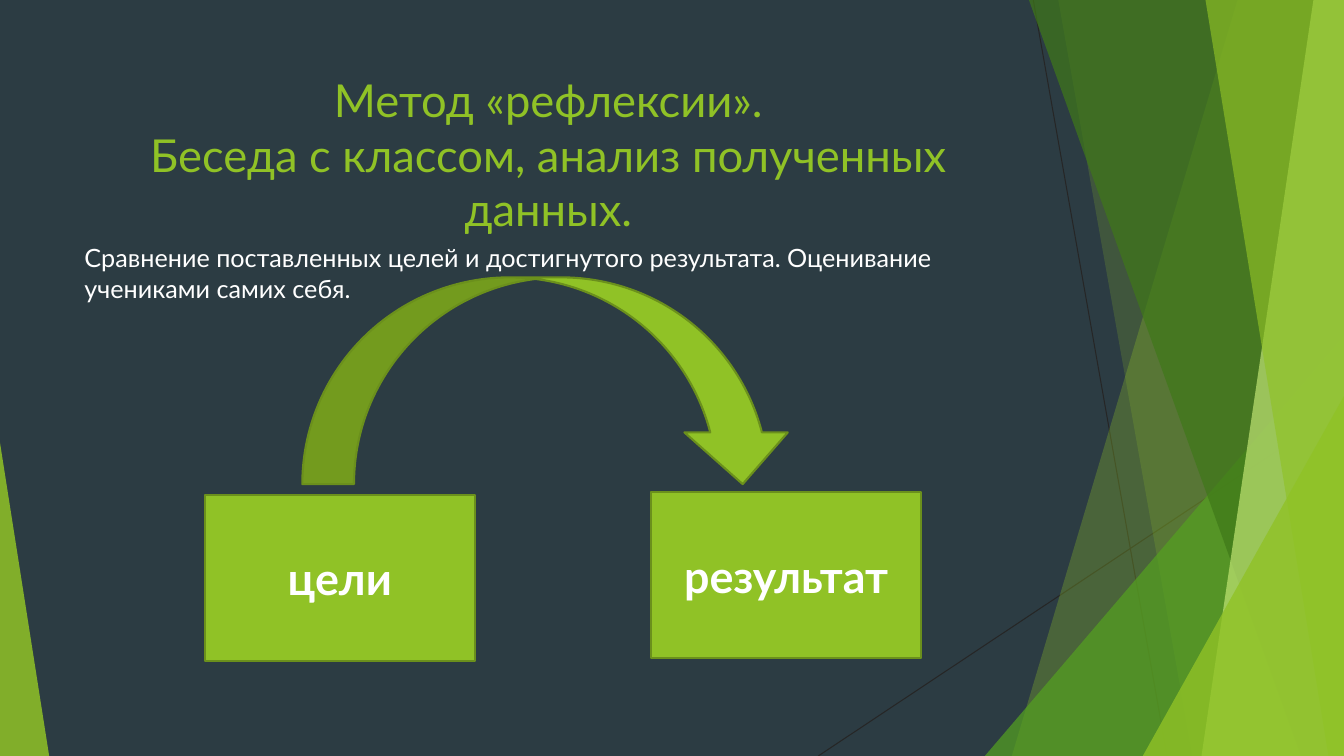
"""Builds the slide on the reflection method: goals lead to a result."""
from lxml import etree
from pptx import Presentation
from pptx.dml.color import RGBColor
from pptx.enum.shapes import MSO_CONNECTOR, MSO_SHAPE
from pptx.enum.text import MSO_ANCHOR, PP_ALIGN
from pptx.oxml.ns import qn
from pptx.util import Cm, Pt

RECT, TRIANGLE, ARROW = MSO_SHAPE.RECTANGLE, MSO_SHAPE.ISOSCELES_TRIANGLE, MSO_SHAPE.CURVED_DOWN_ARROW
STRAIGHT = MSO_CONNECTOR.STRAIGHT
LEFT, CENTER = PP_ALIGN.LEFT, PP_ALIGN.CENTER
TOP, MIDDLE = MSO_ANCHOR.TOP, MSO_ANCHOR.MIDDLE

W, H = 33.87, 19.05
FONT = "Lato"
BACK, LIME, EDGE, WHITE, DARK = "2C3C43", "90C226", "6B901C", "FFFFFF", "262626"

TITLE = "Метод «рефлексии».\nБеседа с классом, анализ полученных данных."
BODY = "Сравнение поставленных целей и достигнутого результата. Оценивание учениками самих себя."
TEXTS = [
    (TITLE, (1.88, 1.7, 23.88, 4.04), dict(size=32.4, color=LIME, align=CENTER)),
    (BODY, (1.88, 5.99, 23.88, 10.77), dict(size=18)),
]
BOXES = [("цели", 5.16, 12.47), ("результат", 16.41, 12.4)]
BOX_W, BOX_H = 6.81, 4.19
ARROW_AT = (7.62, 6.99, 12.4, 5.21)

RAYS = [(26.04, 0, 29.41, H), (W, 10.24, 20.62, H)]
DECOR = [
    ("facet", (31.19, 25.5), LIME, 30),
    ("facet", (26.67, 30.05), LIME, 20),
    ("triangle", (24.82, 8.46, W, 1), "54A021", 72),
    ("facet", (25.93, 32.79), "3F7819", 70),
    ("facet", (33.1, 30.28), "C0E474", 70),
    ("facet", (30.38, 33.48), LIME, 65),
    ("triangle", (28.8, 9.98, W, 1), LIME, 80),
    ("triangle", (0, 11.15, 1.24, 0), LIME, 85),
]


def rgb(value):
    return RGBColor.from_string(value)


def paint(sp, fill, line=None, alpha=100):
    sp.shadow.inherit = False
    sp.fill.solid()
    sp.fill.fore_color.rgb = rgb(fill)
    if alpha < 100:
        clr = sp._element.spPr.find(qn("a:solidFill"))[0]
        etree.SubElement(clr, qn("a:alpha"), val=str(alpha * 1000))
    if line:
        sp.line.color.rgb = rgb(line)
        sp.line.width = Pt(1.5)
    else:
        sp.line.fill.background()


def write(sp, text, size=32, color=WHITE, bold=False, align=LEFT, anchor=TOP):
    tf = sp.text_frame
    tf.word_wrap = True
    tf.vertical_anchor = anchor
    p = tf.paragraphs[0]
    p.text = text
    p.alignment = align
    for r in p.runs:
        r.font.name, r.font.size, r.font.bold = FONT, Pt(size), bold
        r.font.color.rgb = rgb(color)


def add_facet(s, top_x, bottom_x):
    points = [(Cm(x), Cm(y)) for x, y in ((top_x, 0), (W, 0), (W, H), (bottom_x, H))]
    builder = s.shapes.build_freeform(*points[0])
    builder.add_line_segments(points[1:])
    return builder.convert_to_shape()


def add_triangle(s, left, top, right, apex):
    sp = s.shapes.add_shape(TRIANGLE, Cm(left), Cm(top), Cm(right - left), Cm(H - top))
    sp.adjustments[0] = apex
    return sp


def add_ray(s, ends):
    ray = s.shapes.add_connector(STRAIGHT, *map(Cm, ends))
    ray.line.color.rgb = rgb(DARK)
    ray.line.width = Pt(0.75)
    etree.SubElement(ray._element.spPr, qn("a:effectLst"))


def main():
    prs = Presentation()
    prs.slide_width, prs.slide_height = Cm(W), Cm(H)
    s = prs.slides.add_slide(prs.slide_layouts[6])
    s.background.fill.solid()
    s.background.fill.fore_color.rgb = rgb(BACK)

    for ends in RAYS:
        add_ray(s, ends)
    for kind, place, color, alpha in DECOR:
        add = add_facet if kind == "facet" else add_triangle
        paint(add(s, *place), color, alpha=alpha)

    for text, place, style in TEXTS:
        write(s.shapes.add_textbox(*map(Cm, place)), text, **style)
    for text, left, top in BOXES:
        sp = s.shapes.add_shape(RECT, Cm(left), Cm(top), Cm(BOX_W), Cm(BOX_H))
        paint(sp, LIME, EDGE)
        write(sp, text, bold=True, align=CENTER, anchor=MIDDLE)
    paint(s.shapes.add_shape(ARROW, *map(Cm, ARROW_AT)), LIME, EDGE)

    prs.save("out.pptx")


if __name__ == "__main__":
    main()
